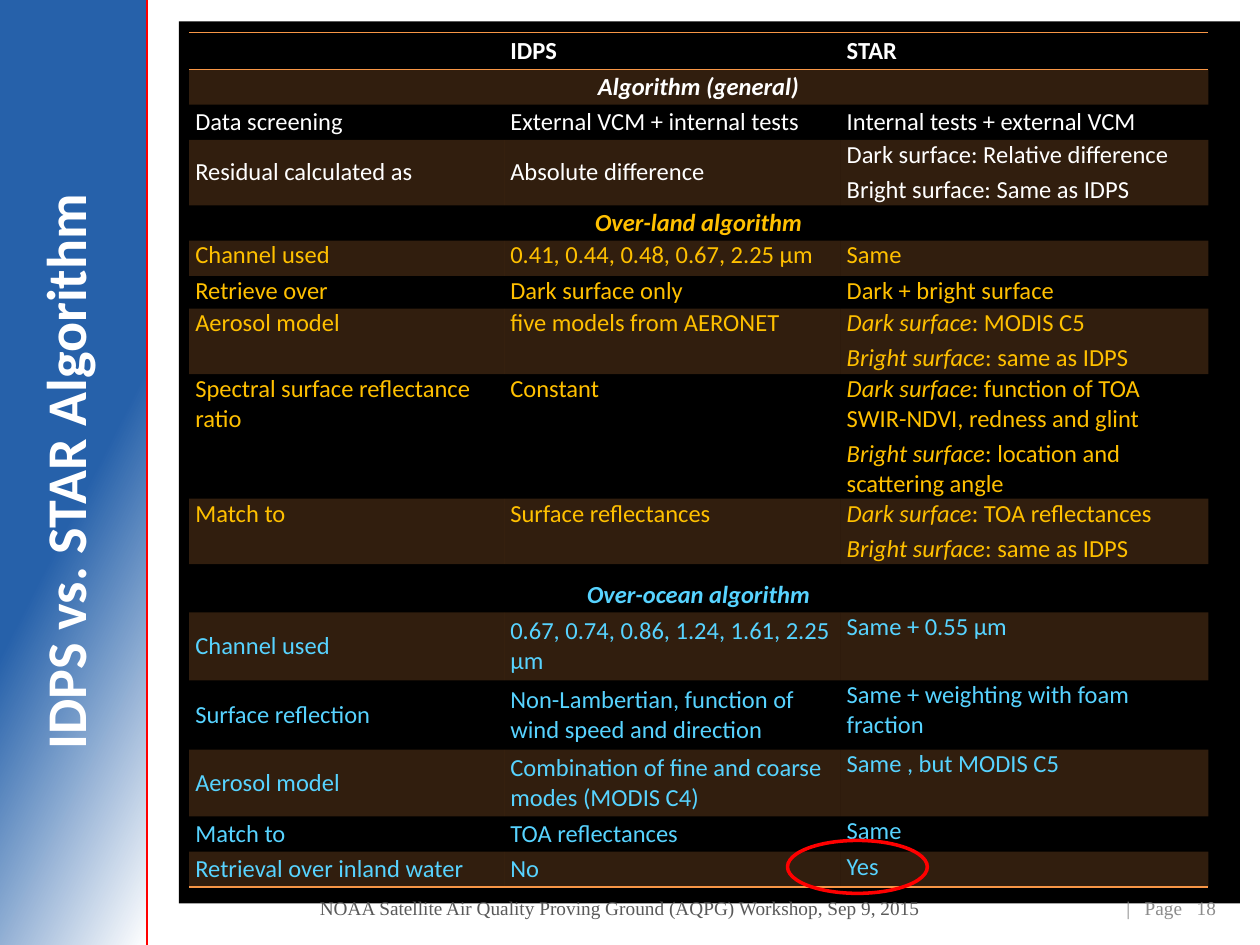
from lxml import etree
from pptx import Presentation
from pptx.dml.color import RGBColor
from pptx.enum.shapes import MSO_CONNECTOR, MSO_SHAPE
from pptx.enum.text import MSO_ANCHOR, PP_ALIGN
from pptx.oxml import parse_xml
from pptx.oxml.ns import nsdecls, qn
from pptx.util import Inches, Pt

TOP, MIDDLE, BOTTOM = MSO_ANCHOR.TOP, MSO_ANCHOR.MIDDLE, MSO_ANCHOR.BOTTOM
LEFT, CENTER, RIGHT = PP_ALIGN.LEFT, PP_ALIGN.CENTER, PP_ALIGN.RIGHT
COLORS = {
    "white": "FFFFFF", "black": "000000", "blue": "2661AA", "red": "FF0000",
    "orange": "F79646", "land": "FFC000", "ocean": "57D3FF",
    "footer": "595959", "page": "8C8C8C",
}
PLAIN_STYLE = "{2D5ABB26-0587-4C30-8999-92F81FD0307C}"
COLUMNS = [2.5, 2.67, 2.92]

# Each section: text color, anchor of each column, rows of (height, cells).
# A row with one cell spans the table; "|" ends an italic lead-in.
GENERAL = ("white", (MIDDLE, MIDDLE, MIDDLE), [
    (0.29, ["", "IDPS", "STAR"]),
    (0.28, ["Algorithm (general)"]),
    (0.28, ["Data screening", "External VCM + internal tests",
            "Internal tests + external VCM"]),
    (0.52, ["Residual calculated as", "Absolute difference",
            "Dark surface: Relative difference\nBright surface: Same as IDPS"]),
])
LAND = ("land", (TOP, TOP, TOP), [
    (0.28, ["Over-land algorithm"]),
    (0.28, ["Channel used", "0.41, 0.44, 0.48, 0.67, 2.25 µm", "Same"]),
    (0.26, ["Retrieve over", "Dark surface only", "Dark + bright surface"]),
    (0.52, ["Aerosol model", "five models from AERONET",
            "Dark surface|: MODIS C5\nBright surface|: same as IDPS"]),
    (0.99, ["Spectral surface reflectance ratio", "Constant",
            "Dark surface|: function of TOA SWIR-NDVI, redness and glint\n"
            "Bright surface|: location and scattering angle"]),
    (0.52, ["Match to", "Surface reflectances",
            "Dark surface|: TOA reflectances\nBright surface|: same as IDPS"]),
])
OCEAN = ("ocean", (MIDDLE, MIDDLE, TOP), [
    (0.28, ["Over-ocean algorithm"]),
    (0.54, ["Channel used", "0.67, 0.74, 0.86, 1.24, 1.61, 2.25 µm",
            "Same + 0.55 µm"]),
    (0.55, ["Surface reflection",
            "Non-Lambertian, function of wind speed and direction",
            "Same + weighting with foam fraction"]),
    (0.53, ["Aerosol model", "Combination of fine and coarse modes (MODIS C4)",
            "Same , but MODIS C5"]),
    (0.28, ["Match to", "TOA reflectances", "Same"]),
    (0.28, ["Retrieval over inland water", "No", "Yes"]),
])


def rgb(name):
    return RGBColor.from_string(COLORS[name])


def style_run(r, size, color, font="Calibri", bold=False, italic=False):
    r.font.size, r.font.name = Pt(size), font
    r.font.bold, r.font.italic = bold, italic
    r.font.color.rgb = rgb(color)


def add_plain_shape(slide, kind, left, top, width, height):
    sp = slide.shapes.add_shape(kind, Inches(left), Inches(top),
                                Inches(width), Inches(height))
    sp.shadow.inherit = False
    sp.line.fill.background()
    return sp


def add_sidebar(slide, width, height):
    """Gradient band along the left edge, its red rule and the upright title."""
    offset = (height - width) / 2
    band = add_plain_shape(slide, MSO_SHAPE.RECTANGLE, -offset, offset, height, width)
    band.rotation = 270
    band.fill.gradient()
    band.fill.gradient_angle = 63
    stops = zip(band.fill.gradient_stops, ((0, "white"), (0.47, "blue")))
    for stop, (position, color) in stops:
        stop.position = position
        stop.color.rgb = rgb(color)

    rule = slide.shapes.add_connector(MSO_CONNECTOR.STRAIGHT, Inches(width),
                                      Inches(height), Inches(width), Inches(0))
    rule.line.color.rgb = rgb("red")
    rule.line.width = Pt(1.25)
    etree.SubElement(rule._element.spPr, qn("a:effectLst"))

    title = slide.shapes.title
    band._element.addnext(title._element)
    title.left, title.top = Inches(-2.33), Inches(3.33)
    title.width, title.height = Inches(5.67), Inches(0.83)
    title.rotation = 270
    tf = title.text_frame
    tf.text = "IDPS vs. STAR Algorithm"
    tf.vertical_anchor = MIDDLE
    tf.paragraphs[0].alignment = CENTER
    style_run(tf.paragraphs[0].runs[0], 32, "white", bold=True)


def set_border(cell, *sides):
    """Draw orange borders; sides are tag names in schema order."""
    for i, side in enumerate(sides):
        cell._tc.get_or_add_tcPr().insert(i, parse_xml(
            f'<a:{side} {nsdecls("a")} w="12700"><a:solidFill>'
            f'<a:srgbClr val="{COLORS["orange"]}"/></a:solidFill></a:{side}>'))


def fill_cell(cell, text, color, anchor, heading, banded):
    cell.margin_left = cell.margin_right = Inches(0.05)
    cell.margin_top = cell.margin_bottom = 0
    cell.vertical_anchor = anchor
    if banded:
        cell.fill.solid()
        cell.fill.fore_color.rgb = rgb("orange")
        swatch = cell._tc.tcPr.find(".//" + qn("a:srgbClr"))
        etree.SubElement(swatch, qn("a:alpha"), val="20000")
    else:
        cell.fill.background()
    tf = cell.text_frame
    for i, line in enumerate(text.split("\n")):
        p = tf.add_paragraph() if i else tf.paragraphs[0]
        p.space_after = Pt(3)
        parts = line.split("|")
        for part in parts:
            r = p.add_run()
            r.text = part
            lead = len(parts) > 1 and part == parts[0]
            style_run(r, 14, color, bold=heading, italic=lead)


def add_comparison(slide, left, top, sections):
    """Table of the sections; odd rows are banded counting from zero."""
    rows = [(color, anchors, height, texts)
            for color, anchors, body in sections for height, texts in body]
    frame = slide.shapes.add_table(
        len(rows), len(COLUMNS), Inches(left), Inches(top),
        Inches(sum(COLUMNS)), Inches(sum(row[2] for row in rows)))
    table = frame.table
    table.first_row = table.horz_banding = False
    frame._element.find(".//" + qn("a:tableStyleId")).text = PLAIN_STYLE
    for column, width in zip(table.columns, COLUMNS):
        column.width = Inches(width)
    for i, (color, anchors, height, texts) in enumerate(rows):
        table.rows[i].height = Inches(height)
        section_row = len(texts) == 1
        heading = section_row or texts[0] == ""
        for j, text in enumerate(texts):
            anchor = MIDDLE if section_row else anchors[j]
            fill_cell(table.cell(i, j), text, color, anchor, heading, i % 2 == 1)
        if section_row:
            cell = table.cell(i, 0)
            cell.merge(table.cell(i, len(COLUMNS) - 1))
            cell.text_frame.paragraphs[0].alignment = CENTER
            cell.text_frame.paragraphs[0].runs[0].font.italic = True
    return table


def add_footer(slide, left, width, text, color, align):
    tf = slide.shapes.add_textbox(Inches(left), Inches(6.95),
                                  Inches(width), Inches(0.4)).text_frame
    tf.word_wrap = True
    tf.vertical_anchor = BOTTOM
    tf.text = text
    tf.paragraphs[0].alignment = align
    style_run(tf.paragraphs[0].runs[0], 11, color, "Times New Roman")


def main():
    prs = Presentation()
    prs.slide_width, prs.slide_height = Inches(10), Inches(7.5)
    slide = prs.slides.add_slide(prs.slide_layouts[5])
    add_sidebar(slide, 1.17, 7.5)

    panel = add_plain_shape(slide, MSO_SHAPE.RECTANGLE, 1.42, 0.17, 8.42, 7)
    panel.fill.solid()
    panel.fill.fore_color.rgb = rgb("black")

    upper = add_comparison(slide, 1.5, 0.26, [GENERAL, LAND])
    add_footer(slide, 1.67, 6.5,
               "NOAA Satellite Air Quality Proving Ground (AQPG) Workshop, Sep 9, 2015",
               "footer", CENTER)
    add_footer(slide, 8.33, 1.42, "|\u00a0\u00a0 Page\u00a0\u00a0 18".replace("\u00a0", " "),
               "page", RIGHT)
    lower = add_comparison(slide, 1.5, 4.58, [OCEAN])
    for j in range(len(COLUMNS)):
        set_border(upper.cell(0, j), "lnT", "lnB")
        set_border(lower.cell(len(lower.rows) - 1, j), "lnB")

    highlight = add_plain_shape(slide, MSO_SHAPE.OVAL, 6.25, 6.67, 1.11, 0.42)
    highlight.fill.background()
    highlight.line.color.rgb = rgb("red")
    highlight.line.width = Pt(2)
    prs.save("out.pptx")


if __name__ == "__main__":
    main()
